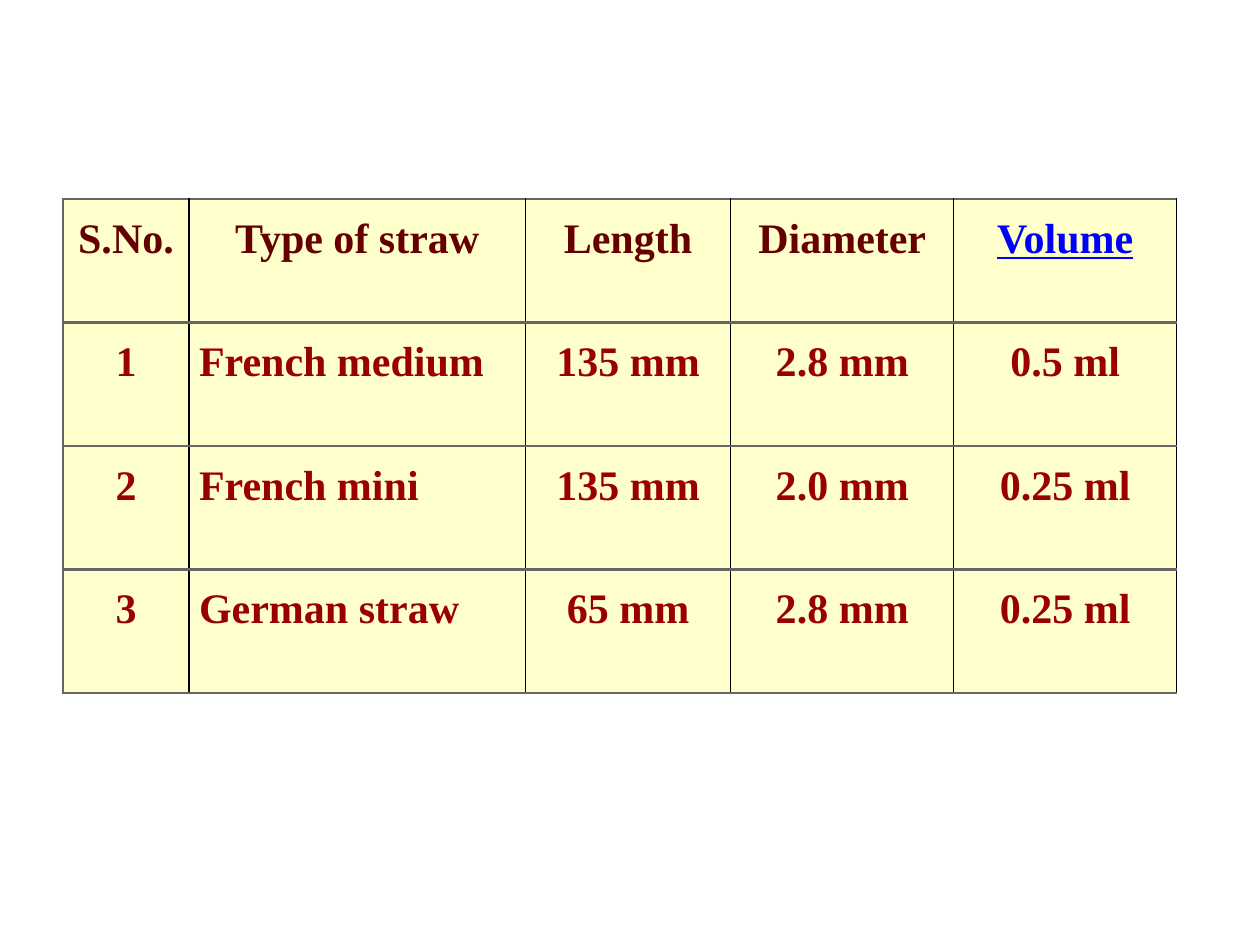
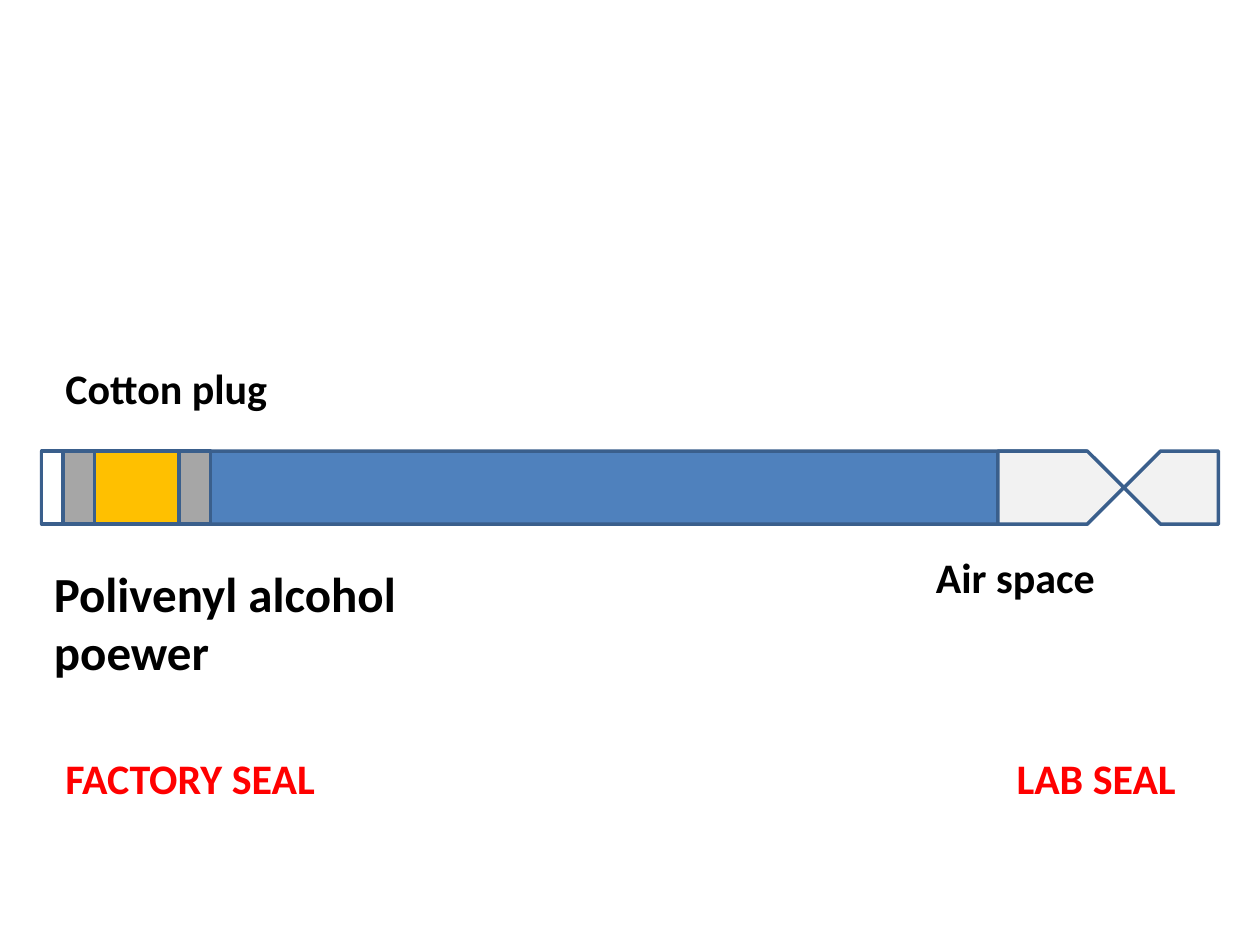
from dataclasses import dataclass

from lxml.etree import SubElement
from pptx import Presentation
from pptx.dml.color import RGBColor
from pptx.enum.shapes import MSO_SHAPE
from pptx.enum.text import PP_ALIGN
from pptx.oxml.ns import qn
from pptx.slide import Slide
from pptx.table import _Cell
from pptx.text.text import _Paragraph
from pptx.util import Inches, Pt

# Shared style
TABLE_FONT = "Times New Roman"
LABEL_FONT = "Calibri"
CREAM = RGBColor(0xFF, 0xFF, 0xCC)
MAROON = RGBColor(0x66, 0x00, 0x00)
DARK_RED = RGBColor(0x99, 0x00, 0x00)
LINK_BLUE = RGBColor(0x00, 0x00, 0xFF)
RULE_GRAY = RGBColor(0x66, 0x66, 0x66)
BLACK = RGBColor(0x00, 0x00, 0x00)
WHITE = RGBColor(0xFF, 0xFF, 0xFF)
RED = RGBColor(0xFF, 0x00, 0x00)
SEMEN_BLUE = RGBColor(0x4F, 0x81, 0xBD)
OUTLINE_BLUE = RGBColor(0x3A, 0x5F, 0x8C)
COTTON_GRAY = RGBColor(0xA6, 0xA6, 0xA6)
POWDER_GOLD = RGBColor(0xFF, 0xC0, 0x00)
AIR_GRAY = RGBColor(0xF2, 0xF2, 0xF2)

# Straw types table
COLUMN_WIDTHS = (1, 2.67, 1.63, 1.77, 1.77)
ROW_HEIGHT = 0.98
CELL_MARGIN = Inches(0.08)
TYPE_COLUMN = 1
STRAW_TYPES = (
    ("S.No.", "Type of straw", "Length", "Diameter", "Volume"),
    ("1", "French medium", "135 mm", "2.8 mm", "0.5 ml"),
    ("2", "French mini", "135 mm", "2.0 mm", "0.25 ml"),
    ("3", "German straw", "65 mm", "2.8 mm", "0.25 ml"),
)

# Straw diagram
STRAW_TOP = 3.58
STRAW_HEIGHT = 0.58


@dataclass(frozen=True)
class Segment:
    left: float
    width: float
    fill: RGBColor
    kind: MSO_SHAPE = MSO_SHAPE.RECTANGLE
    rotation: float = 0


@dataclass(frozen=True)
class Label:
    text: str
    left: float
    top: float
    width: float
    height: float = 0.5
    size: int = 24
    color: RGBColor = BLACK


SEGMENTS = (
    Segment(0.33, 8.58, SEMEN_BLUE, MSO_SHAPE.PENTAGON),
    Segment(0.5, 0.25, COTTON_GRAY),
    Segment(0.75, 0.67, POWDER_GOLD),
    Segment(1.42, 0.25, COTTON_GRAY),
    Segment(8.92, 0.75, AIR_GRAY, MSO_SHAPE.PENTAGON, 180),
    Segment(7.92, 1, AIR_GRAY, MSO_SHAPE.PENTAGON),
    Segment(0.33, 0.17, WHITE),
)
LABELS = (
    Label("Cotton plug", 0.42, 2.83, 2.25),
    Label("Polivenyl alcohol poewer", 0.33, 4.42, 3.17, 1.04, 28),
    Label("FACTORY SEAL", 0.42, 5.92, 2.5, color=RED),
    Label("LAB SEAL", 7.97, 5.92, 1.53, color=RED),
    Label("Air space", 7.33, 4.33, 2.25),
)


def add_run(paragraph: _Paragraph, text: str, font: str, size: int,
            color: RGBColor, underline: bool = False) -> None:
    run = paragraph.add_run()
    run.text = text
    run.font.name = font
    run.font.size = Pt(size)
    run.font.bold = True
    run.font.color.rgb = color
    if underline:
        run.font.underline = True


def set_border(cell: _Cell, side: str, color: RGBColor, width: float) -> None:
    line = SubElement(cell._tc.get_or_add_tcPr(), qn(f"a:ln{side}"), w=str(Pt(width)))
    SubElement(SubElement(line, qn("a:solidFill")), qn("a:srgbClr"), val=str(color))


def style_cell(cell: _Cell, text: str, row: int, column: int) -> None:
    # Borders come before the fill in the cell properties
    left_edge = (RULE_GRAY, 1.5) if column == 0 else (BLACK, 1)
    set_border(cell, "L", *left_edge)
    set_border(cell, "R", BLACK, 1)
    set_border(cell, "T", RULE_GRAY, 1.5)
    set_border(cell, "B", RULE_GRAY, 1.5)
    cell.fill.solid()
    cell.fill.fore_color.rgb = CREAM
    cell.margin_left = cell.margin_right = CELL_MARGIN
    cell.margin_top = cell.margin_bottom = CELL_MARGIN

    is_header = row == 0
    is_link = text == "Volume"
    paragraph = cell.text_frame.paragraphs[0]
    is_type_name = column == TYPE_COLUMN and not is_header
    paragraph.alignment = PP_ALIGN.LEFT if is_type_name else PP_ALIGN.CENTER
    paragraph.line_spacing = 1.15
    paragraph.space_after = Pt(12)
    color = LINK_BLUE if is_link else MAROON if is_header else DARK_RED
    add_run(paragraph, text, TABLE_FONT, 24, color, is_link)


def add_straw_table(slide: Slide) -> None:
    table = slide.shapes.add_table(
        len(STRAW_TYPES), len(COLUMN_WIDTHS), Inches(0.5), Inches(1.58),
        Inches(sum(COLUMN_WIDTHS)), Inches(ROW_HEIGHT * len(STRAW_TYPES))).table
    table.first_row = table.horz_banding = False
    for column, width in zip(table.columns, COLUMN_WIDTHS):
        column.width = Inches(width)
    for r, values in enumerate(STRAW_TYPES):
        table.rows[r].height = Inches(ROW_HEIGHT)
        for c, value in enumerate(values):
            style_cell(table.cell(r, c), value, r, c)


def add_segment(slide: Slide, segment: Segment) -> None:
    part = slide.shapes.add_shape(
        segment.kind, Inches(segment.left), Inches(STRAW_TOP),
        Inches(segment.width), Inches(STRAW_HEIGHT))
    part.rotation = segment.rotation
    part.shadow.inherit = False
    part.fill.solid()
    part.fill.fore_color.rgb = segment.fill
    part.line.color.rgb = OUTLINE_BLUE
    part.line.width = Pt(2)


def add_label(slide: Slide, label: Label) -> None:
    frame = slide.shapes.add_textbox(
        Inches(label.left), Inches(label.top),
        Inches(label.width), Inches(label.height)).text_frame
    frame.word_wrap = True
    add_run(frame.paragraphs[0], label.text, LABEL_FONT, label.size, label.color)


def main() -> None:
    deck = Presentation()
    deck.slide_width, deck.slide_height = Inches(10), Inches(7.5)
    blank = deck.slide_layouts[6]

    # Slide 1: straw sizes
    add_straw_table(deck.slides.add_slide(blank))

    # Slide 2: parts of a filled straw
    diagram = deck.slides.add_slide(blank)
    for segment in SEGMENTS:
        add_segment(diagram, segment)
    for label in LABELS:
        add_label(diagram, label)

    deck.save("out.pptx")


if __name__ == "__main__":
    main()
